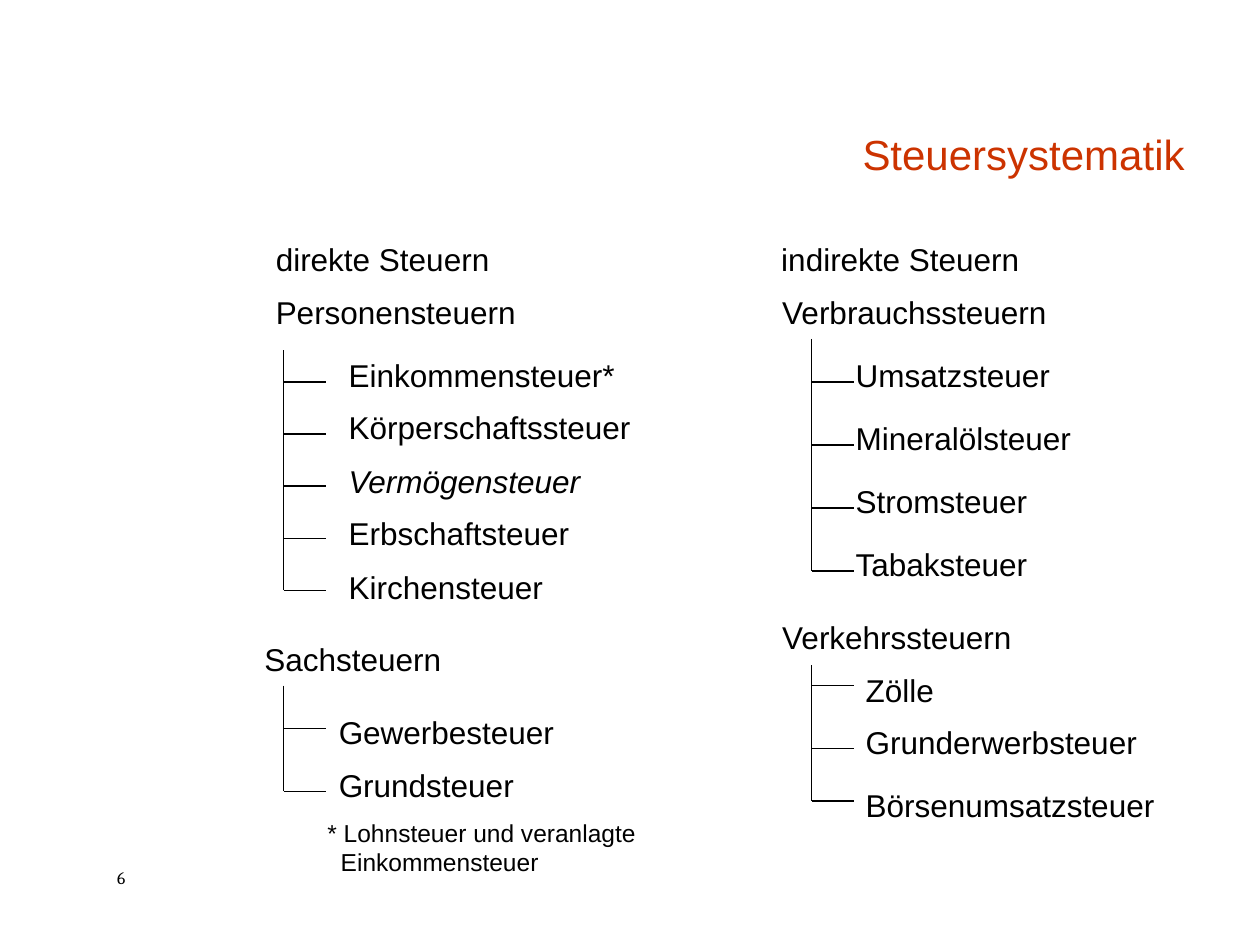
from lxml import etree
from pptx import Presentation
from pptx import util as u
from pptx.dml.color import RGBColor
from pptx.enum import shapes, text
from pptx.oxml.ns import qn

BLACK = RGBColor(0x00, 0x00, 0x00)
RED = RGBColor(0xCC, 0x33, 0x00)
ALIGN = text.PP_ALIGN
ROW = 1.02   # height of a one-line box
TICK = 0.85  # length of a branch


class Page:
    """Holds the text style and the current slide."""

    base = {"name": "Arial", "size": u.Pt(18), "italic": False}

    def __init__(self, slide):
        self.slide = slide

    def label(self, words, x, y, w, h=ROW, color=BLACK, para=None, **font):
        box = self.slide.shapes.add_textbox(u.Cm(x), u.Cm(y), u.Cm(w), u.Cm(h))
        frame = box.text_frame
        frame.word_wrap = True
        p = frame.paragraphs[0]
        p.text = words
        for key, val in (para or {}).items():
            setattr(p, key, val)
        for run in p.runs:
            for key, val in {**self.base, **font}.items():
                setattr(run.font, key, val)
            run.font.color.rgb = color
        return box

    def line(self, x1, y1, x2, y2):
        rule = self.slide.shapes.add_connector(
            shapes.MSO_CONNECTOR.STRAIGHT, u.Cm(x1), u.Cm(y1), u.Cm(x2), u.Cm(y2))
        rule.line.color.rgb = BLACK
        rule.line.width = u.Pt(0.75)
        etree.SubElement(rule._element.spPr, qn("a:effectLst"))

    def tree(self, head, spot, trunk, left, items):
        """Heading, trunk (x, top) and items (words, top, branch height)."""
        self.label(head, *spot, 7.3)
        x, top = trunk
        self.line(x, top, x, items[-1][2])
        for words, y, mid in items:
            self.line(x, mid, x + TICK, mid)
            self.label(words, left, y, 6.7, italic=words == "Vermögensteuer")


def main():
    deck = Presentation()
    deck.slide_width, deck.slide_height = u.Cm(25.4), u.Cm(19.05)
    page = Page(deck.slides.add_slide(deck.slide_layouts[6]))

    # Title and page number
    title = page.label("Steuersystematik", 5.31, 1.07, 18.82, 2.67, RED,
                       {"alignment": ALIGN.RIGHT, "line_spacing": 0.9},
                       size=u.Pt(24))
    title.text_frame.vertical_anchor = text.MSO_ANCHOR.BOTTOM
    page.label("6", 2.11, 17.35, 1.7, 0.69, name="Cambria", size=u.Pt(10))

    # Column heads
    page.label("direkte Steuern", 5.31, 4.72, 8.46)
    page.label("indirekte Steuern", 15.29, 4.72, 5.72,
               para={"alignment": ALIGN.CENTER})

    # Direct taxes
    person = [("Einkommensteuer*", 7.06), ("Körperschaftssteuer", 8.1),
              ("Vermögensteuer", 9.19), ("Erbschaftsteuer", 10.24),
              ("Kirchensteuer", 11.33)]
    page.tree("Personensteuern", (5.31, 5.79), (5.72, 7.06), 6.78,
              [(words, y, 7.7 + 1.05 * i) for i, (words, y) in enumerate(person)])
    page.tree("Sachsteuern", (5.08, 12.78), (5.72, 13.82), 6.58,
              [("Gewerbesteuer", 14.25, 14.68), ("Grundsteuer", 15.32, 15.95)])

    # Indirect taxes
    usage = ["Umsatzsteuer", "Mineralölsteuer", "Stromsteuer", "Tabaksteuer"]
    page.tree("Verbrauchssteuern", (15.52, 5.79), (16.36, 6.83), 17,
              [(words, 7.06 + 1.27 * i, 7.7 + 1.27 * i)
               for i, words in enumerate(usage)])
    page.tree("Verkehrssteuern", (15.52, 12.34), (16.36, 13.41), 17.2,
              [("Zölle", 13.41, 13.82), ("Grunderwerbsteuer", 14.45, 15.09),
               ("Börsenumsatzsteuer", 15.72, 16.15)])

    # Footnote with a hanging indent
    note = page.label("* Lohnsteuer und veranlagte\vEinkommensteuer",
                      6.35, 16.36, 8.05, 1.45, size=u.Pt(14))
    props = note.text_frame.paragraphs[0]._p.get_or_add_pPr()
    hang = u.Cm(0.27)
    props.set("marL", str(hang))
    props.set("indent", str(-hang))

    deck.save("out.pptx")


if __name__ == "__main__":
    main()
